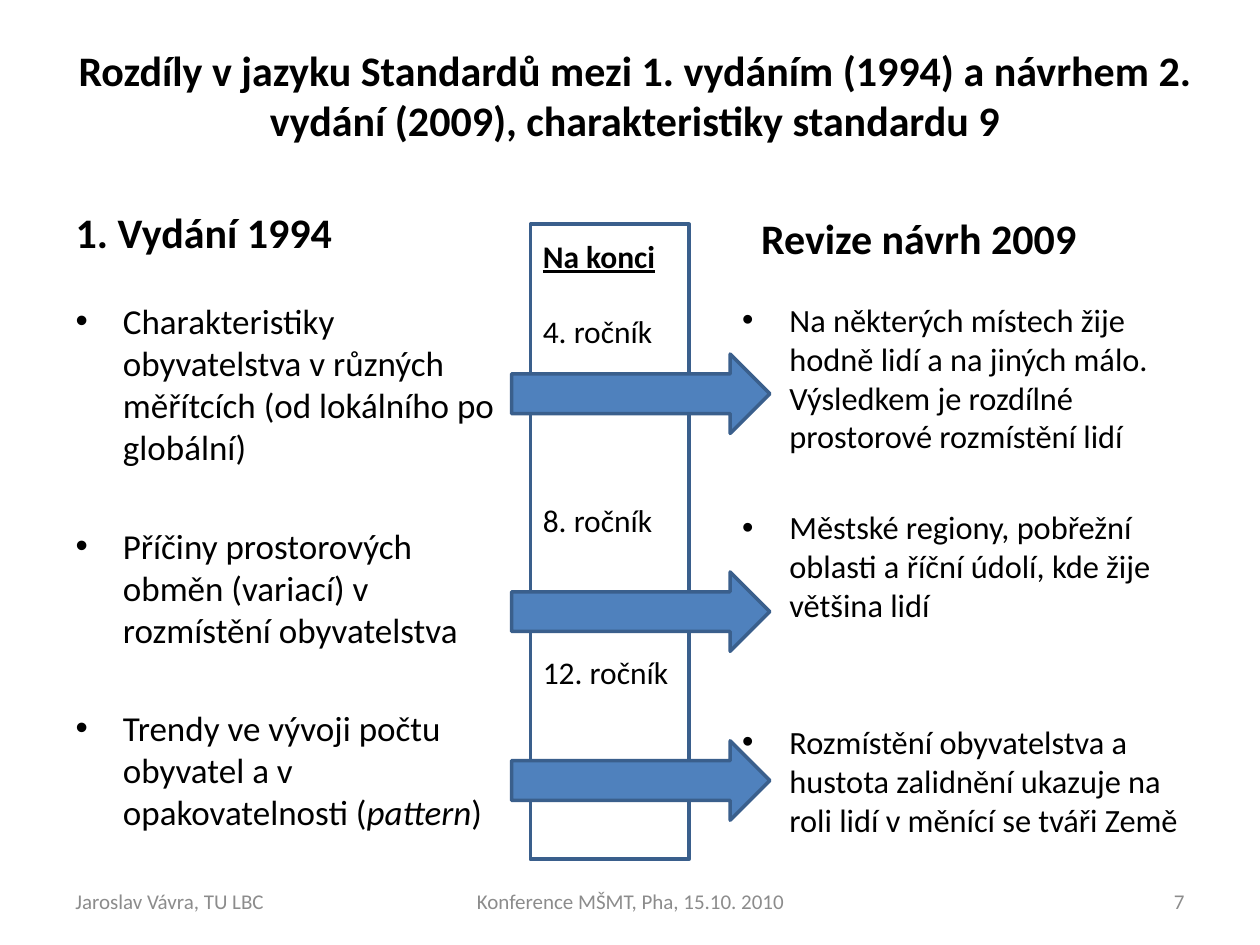
from dataclasses import dataclass

from pptx import Presentation
from pptx import util as u
from pptx.dml.color import RGBColor
from pptx.enum import shapes, text

SLIDE_WIDTH, SLIDE_HEIGHT = u.Inches(10), u.Inches(7.5)


@dataclass(frozen=True)
class Theme:
    """Colours, font and type sizes of the slide."""
    font: str = "Calibri"
    ink: RGBColor = RGBColor(0, 0, 0)
    muted: RGBColor = RGBColor(0x8C, 0x8C, 0x8C)
    accent: RGBColor = RGBColor(0x4F, 0x81, 0xBD)
    outline: RGBColor = RGBColor(0x3A, 0x5F, 0x8C)
    heading: float = 24
    old_list: float = 20
    new_list: float = 18.5
    grade: float = 18
    footer: float = 12
    line_width: float = 2


THEME = Theme()
LEFT, GRADES_LEFT, GRADES_WIDTH = 5, 42.1, 12.6
LIST_TOP, LIST_HEIGHT = 31.07, 58.93
ARROW_TOPS = (37.47, 60.53, 78.4)


def area(left, top, width, height):
    """Turn percentages of the slide into lengths."""
    return (int(SLIDE_WIDTH * left / 100), int(SLIDE_HEIGHT * top / 100),
            int(SLIDE_WIDTH * width / 100), int(SLIDE_HEIGHT * height / 100))


def place(shape, box):
    """Move a placeholder to a box."""
    shape.left, shape.top, shape.width, shape.height = area(*box)


def format_runs(paragraph, size, color=THEME.ink, bold=False):
    """Give every run of a paragraph the same font."""
    for run in paragraph.runs:
        run.font.name = THEME.font
        run.font.size = u.Pt(size)
        run.font.bold = bold
        run.font.color.rgb = color


def fill_heading(placeholder, box, wording):
    """Fill a title or column heading."""
    place(placeholder, box)
    frame = placeholder.text_frame
    frame.text = wording
    frame.auto_size = text.MSO_AUTO_SIZE.NONE
    format_runs(frame.paragraphs[0], THEME.heading, bold=True)


def fill_paragraphs(frame, items, size):
    """Write (wording, space before) pairs as paragraphs."""
    frame.auto_size = text.MSO_AUTO_SIZE.NONE
    for index, (wording, space) in enumerate(items):
        paragraph = frame.paragraphs[0] if index == 0 else frame.add_paragraph()
        paragraph.text = wording
        paragraph.space_before = u.Pt(space)
        format_runs(paragraph, size)


def fill_list(placeholder, box, items, size):
    """Fill a bulleted list."""
    place(placeholder, box)
    fill_paragraphs(placeholder.text_frame, items, size)


def add_textbox(slide, box):
    """Add a wrapping text box and return its frame."""
    frame = slide.shapes.add_textbox(*area(*box)).text_frame
    frame.word_wrap = True
    return frame


def add_footer(slide, left, width, wording, alignment):
    """Add one part of the footer line."""
    frame = add_textbox(slide, (left, 92.67, width, 5.33))
    frame.vertical_anchor = text.MSO_ANCHOR.MIDDLE
    frame.text = wording
    frame.paragraphs[0].alignment = alignment
    format_runs(frame.paragraphs[0], THEME.footer, THEME.muted)


def add_outlined(slide, kind, box, fill=None):
    """Add an outlined preset shape, filled if a colour is given."""
    shape = slide.shapes.add_shape(kind, *area(*box))
    shape.shadow.inherit = False
    shape.line.color.rgb = THEME.outline
    shape.line.width = u.Pt(THEME.line_width)
    if fill is None:
        shape.fill.background()
    else:
        shape.fill.solid()
        shape.fill.fore_color.rgb = fill


def add_grades(slide):
    """Add the column of grades with its frame and arrows."""
    frame = add_textbox(slide, (GRADES_LEFT, 24.4, GRADES_WIDTH, 66))
    fill_paragraphs(frame, [("Na konci", 0), ("4. ročník", 21.6),
                            ("8. ročník", 86.4), ("12. ročník", 64.8)], THEME.grade)
    label = frame.paragraphs[0].runs[0].font
    label.bold = label.underline = True
    add_outlined(slide, shapes.MSO_SHAPE.RECTANGLE, (GRADES_LEFT, 23.73, GRADES_WIDTH, 67.2))
    for top in ARROW_TOPS:
        add_outlined(slide, shapes.MSO_SHAPE.RIGHT_ARROW, (40.6, top, 20.5, 8.4), THEME.accent)


def main():
    """Build and save the slide."""
    presentation = Presentation()
    presentation.slide_width, presentation.slide_height = SLIDE_WIDTH, SLIDE_HEIGHT
    slide = presentation.slides.add_slide(presentation.slide_layouts.get_by_name("Comparison"))
    title, old_heading, old_list, new_heading, new_list = slide.placeholders

    fill_heading(title, (0.4, 3.33, 100, 13.33),
                 "Rozdíly v jazyku Standardů mezi 1. vydáním (1994) a návrhem 2. vydání (2009), "
                 "charakteristiky standardu 9")
    fill_heading(old_heading, (LEFT, 18.53, 44.2, 9.33), "1. Vydání 1994")
    fill_heading(new_heading, (59.4, 18.53, 40.6, 10), "Revize návrh 2009")

    fill_list(old_list, (LEFT, LIST_TOP, 36.3, LIST_HEIGHT), [
        ("Charakteristiky obyvatelstva v různých měřítcích (od lokálního po globální)", 4),
        ("Příčiny prostorových obměn (variací) v rozmístění obyvatelstva", 32),
        ("Trendy ve vývoji počtu obyvatel a v opakovatelnosti (", 32),
    ], THEME.old_list)
    trends = old_list.text_frame.paragraphs[-1]
    for wording in ("pattern", ")"):
        trends.add_run().text = wording
    format_runs(trends, THEME.old_list)
    trends.runs[1].font.italic = True

    fill_list(new_list, (57.9, LIST_TOP, 37.1, LIST_HEIGHT), [
        ("Na některých místech žije hodně lidí a na jiných málo. "
         "Výsledkem je rozdílné prostorové rozmístění lidí", 3.7),
        ("Městské regiony, pobřežní oblasti a říční údolí, kde žije většina lidí", 29.7),
        ("Rozmístění obyvatelstva a hustota zalidnění ukazuje na roli lidí "
         "v měnící se tváři Země", 56),
    ], THEME.new_list)

    add_grades(slide)
    add_footer(slide, LEFT, 23.3, "Jaroslav Vávra, TU LBC", text.PP_ALIGN.LEFT)
    add_footer(slide, 34.2, 31.7, "Konference MŠMT, Pha, 15.10. 2010", text.PP_ALIGN.CENTER)
    add_footer(slide, 71.7, 23.3, "7", text.PP_ALIGN.RIGHT)
    presentation.save("out.pptx")


if __name__ == "__main__":
    main()
